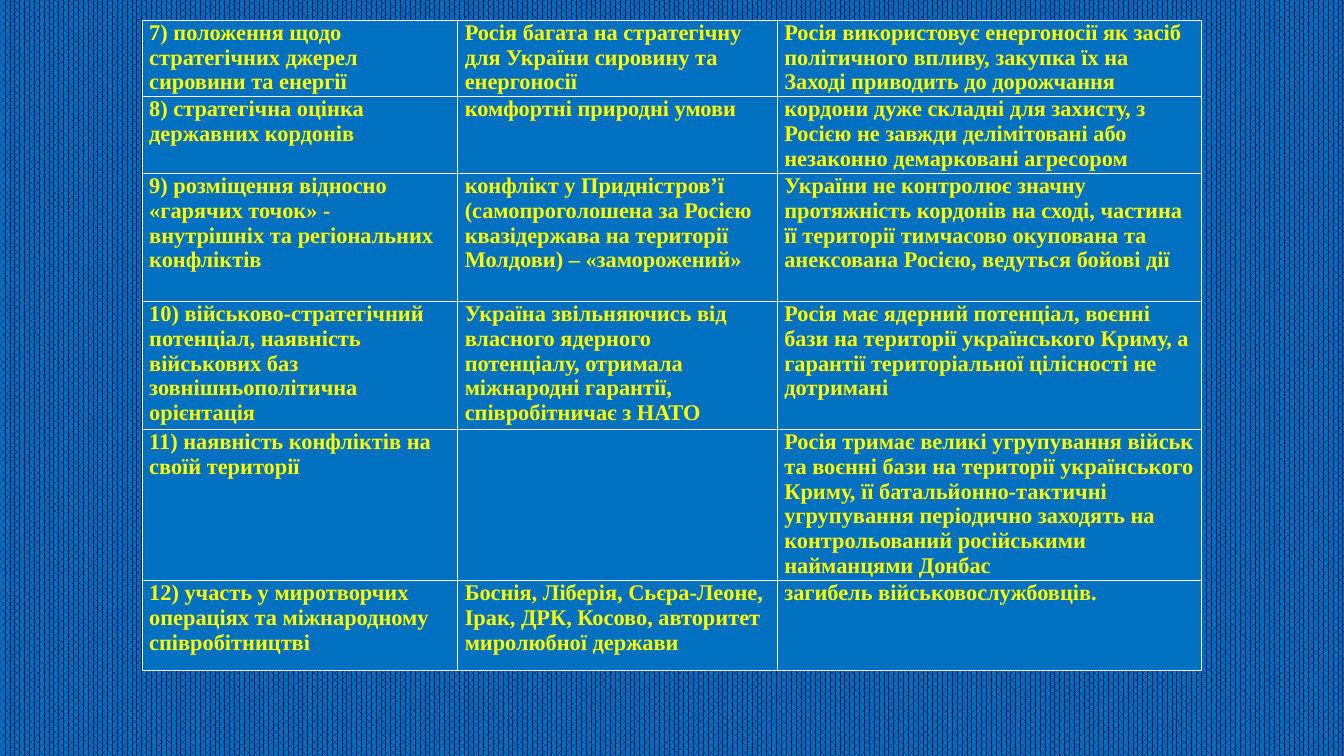
from lxml import etree
from pptx import Presentation
from pptx.dml.color import RGBColor
from pptx.enum.dml import MSO_PATTERN
from pptx.oxml.ns import qn
from pptx.util import Inches, Pt

NAVY = RGBColor(0x00, 0x20, 0x60)
BLUE = RGBColor(0x00, 0x70, 0xC0)
YELLOW = RGBColor(0xFF, 0xFF, 0x00)
WHITE = RGBColor(0xFF, 0xFF, 0xFF)
DENSE_DOTS = MSO_PATTERN.PERCENT_70

GRID_LINES = 100
LEFT, TOP = 10.58, 2.67
COLUMN_SPANS = (23.48, 23.78, 31.58)
ROW_SPANS = (10.13, 10.13, 16.93, 16.93, 20, 11.87)

POSITION_ROWS = (
    ("7) положення щодо стратегічних джерел сировини та енергії",
     "Росія багата на стратегічну для України сировину та енергоносії",
     "Росія використовує енергоносії як засіб політичного впливу, закупка їх на "
     "Заході приводить до дорожчання"),
    ("8) стратегічна оцінка державних кордонів",
     "комфортні природні умови",
     "кордони дуже складні для захисту, з Росією не завжди делімітовані або "
     "незаконно демарковані агресором"),
    ("9) розміщення відносно «гарячих точок» - внутрішніх та регіональних конфліктів",
     "конфлікт у Придністров’ї (самопроголошена за Росією квазідержава на "
     "території Молдови) – «заморожений»",
     "України не контролює значну протяжність кордонів на сході, частина її "
     "території тимчасово окупована та анексована Росією, ведуться бойові дії"),
    ("10) військово-стратегічний потенціал, наявність військових баз "
     "зовнішньополітична орієнтація",
     "Україна звільняючись від власного ядерного потенціалу, отримала міжнародні "
     "гарантії, співробітничає з НАТО",
     "Росія має ядерний потенціал, воєнні бази на території українського Криму, а "
     "гарантії територіальної цілісності не дотримані"),
    ("11) наявність конфліктів на своїй території",
     "",
     "Росія тримає великі угрупування військ та воєнні бази на території "
     "українського Криму, її батальйонно-тактичні угрупування періодично заходять "
     "на контрольований російськими найманцями Донбас"),
    ("12) участь у миротворчих операціях та міжнародному співробітництві",
     "Боснія, Ліберія, Сьєра-Леоне, Ірак, ДРК, Косово, авторитет миролюбної держави",
     "загибель військовослужбовців."),
)


class SlideBuilder:
    font_format = {"name": "Times New Roman", "size": Pt(16), "bold": True}
    cell_format = {"margin_left": Inches(0.07), "margin_right": Inches(0.07),
                   "margin_top": 0, "margin_bottom": 0}
    table_format = {"first_row": False, "horz_banding": False}
    border_width = Pt(1)

    def __init__(self, deck):
        self.deck = deck
        self.slide = deck.slides.add_slide(deck.slide_layouts[6])

    def across(self, columns):
        return round(self.deck.slide_width * columns / GRID_LINES)

    def down(self, rows):
        return round(self.deck.slide_height * rows / GRID_LINES)

    def apply(self, target, values):
        for name, value in values.items():
            setattr(target, name, value)

    def background(self, pattern, front, back):
        fill = self.slide.background.fill
        fill.patterned()
        fill.pattern = pattern
        fill.fore_color.rgb = front
        fill.back_color.rgb = back

    def borders(self, cell):
        properties = cell._tc.get_or_add_tcPr()
        for position, side in enumerate(("lnL", "lnR", "lnT", "lnB")):
            line = etree.Element(qn(f"a:{side}"), w=str(self.border_width))
            solid = etree.SubElement(line, qn("a:solidFill"))
            etree.SubElement(solid, qn("a:srgbClr"), val=str(WHITE))
            properties.insert(position, line)

    def cell(self, cell, text):
        self.apply(cell, self.cell_format)
        cell.fill.solid()
        cell.fill.fore_color.rgb = BLUE
        self.borders(cell)
        if text:
            span = cell.text_frame.paragraphs[0].add_run()
            span.text = text
            self.apply(span.font, self.font_format)
            span.font.color.rgb = YELLOW

    def table(self, left, top, column_spans, row_spans, texts):
        frame = self.slide.shapes.add_table(
            len(row_spans), len(column_spans), self.across(left), self.down(top),
            self.across(sum(column_spans)), self.down(sum(row_spans)))
        table = frame.table
        self.apply(table, self.table_format)
        for column, span in zip(table.columns, column_spans):
            column.width = self.across(span)
        for row, span, row_texts in zip(table.rows, row_spans, texts):
            row.height = self.down(span)
            for cell, text in zip(row.cells, row_texts):
                self.cell(cell, text)


def main():
    deck = Presentation()
    deck.slide_width, deck.slide_height = Inches(13.33), Inches(7.5)
    builder = SlideBuilder(deck)
    builder.background(DENSE_DOTS, NAVY, BLUE)
    builder.table(LEFT, TOP, COLUMN_SPANS, ROW_SPANS, POSITION_ROWS)
    deck.save("out.pptx")


if __name__ == "__main__":
    main()
